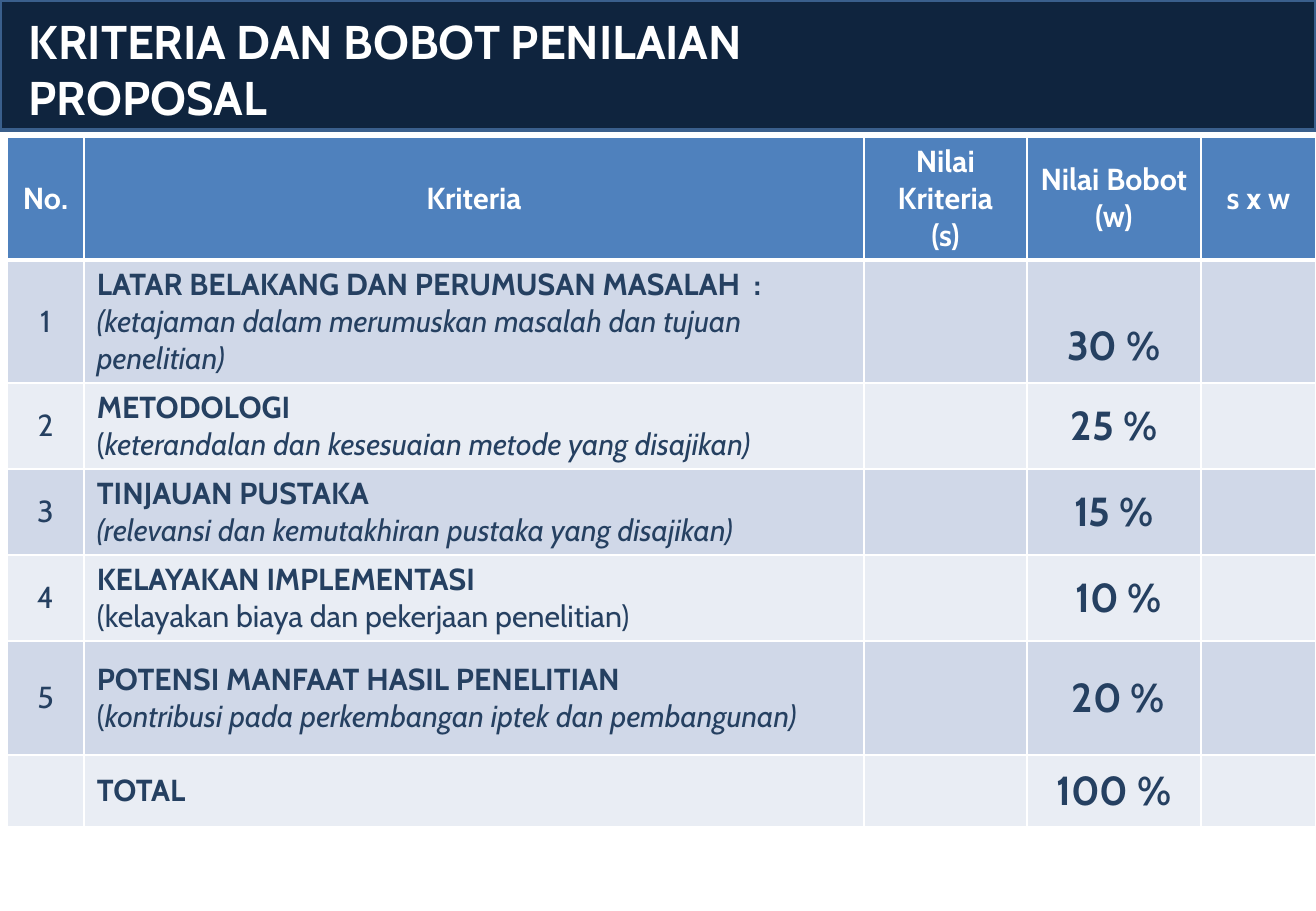
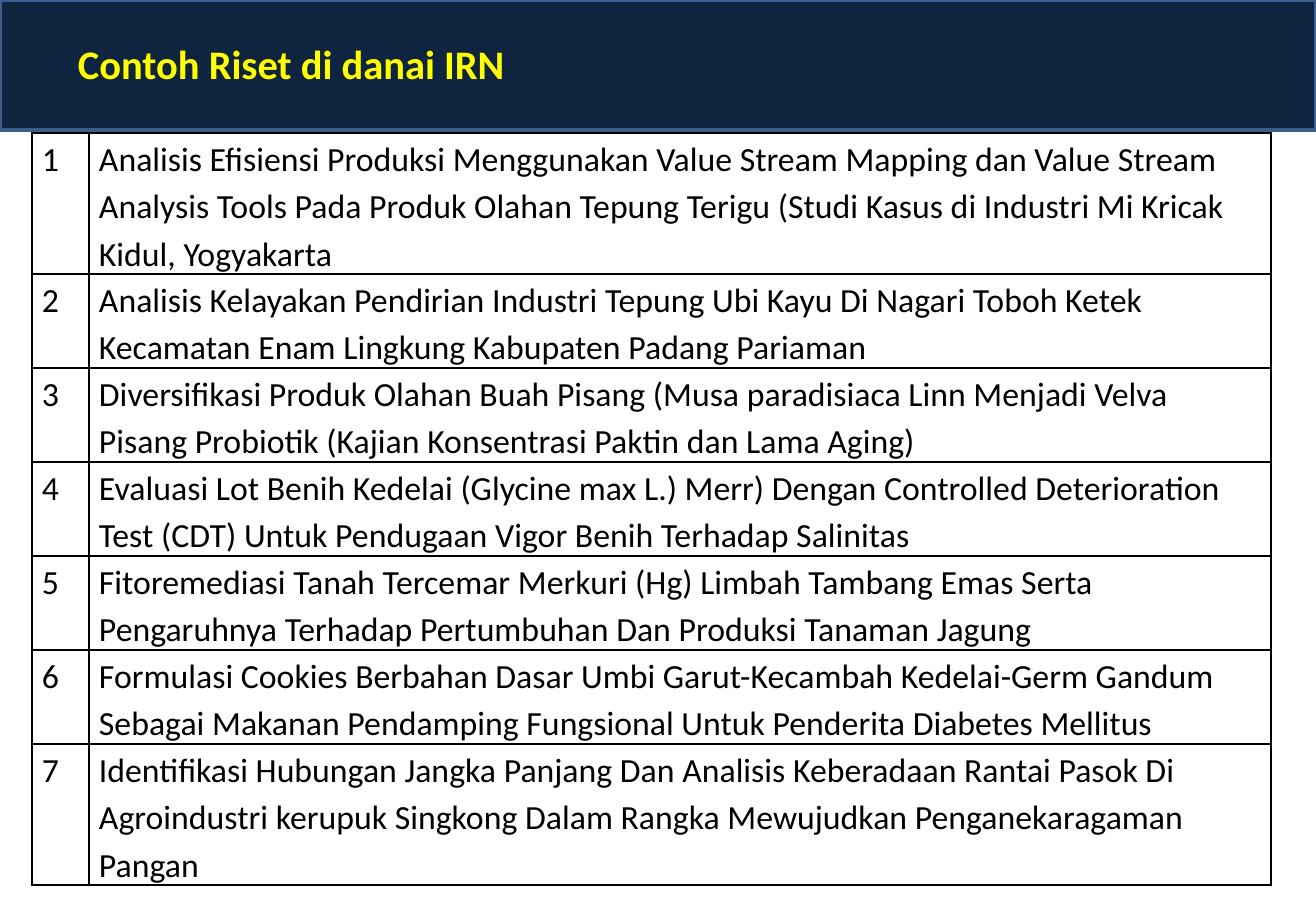
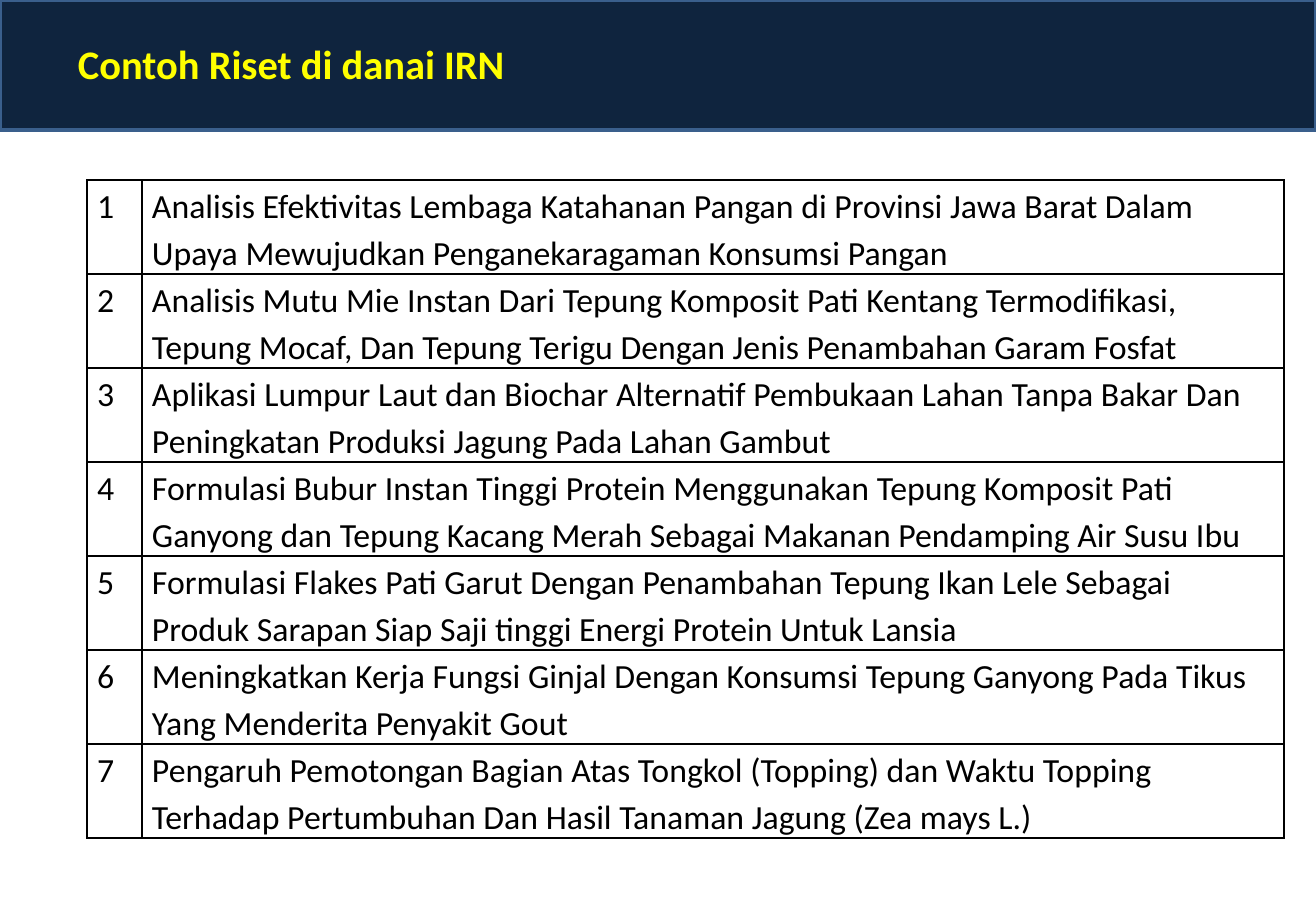
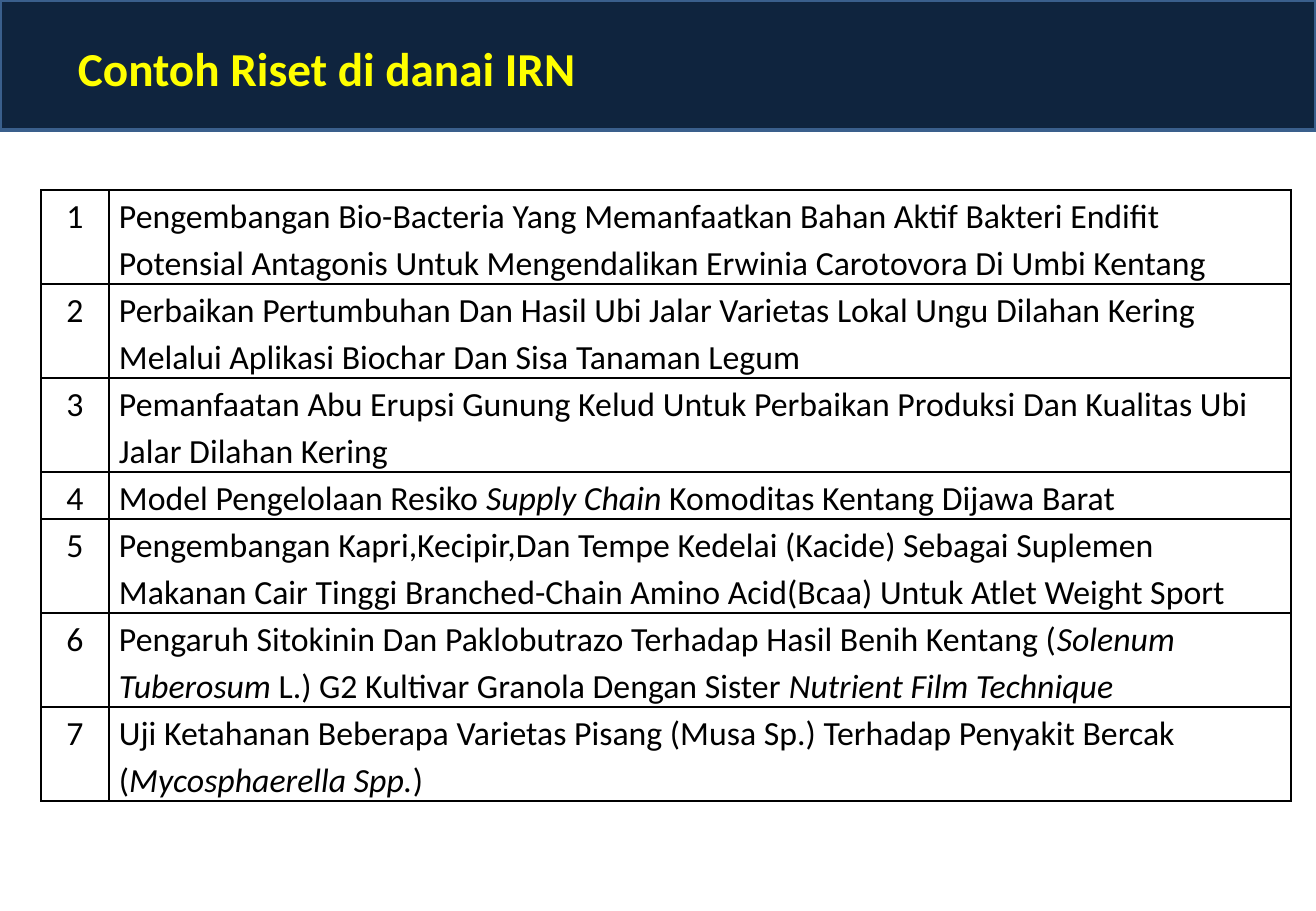
from lxml import etree
from pptx import Presentation
from pptx.dml.color import RGBColor
from pptx.enum.shapes import MSO_SHAPE
from pptx.enum.text import MSO_ANCHOR, PP_ALIGN
from pptx.oxml.ns import qn
from pptx.util import Emu, Pt

PX = 914400 / 121.5

NAVY = RGBColor(0x0F, 0x24, 0x3E)
EDGE = RGBColor(0x3A, 0x5F, 0x8C)
BLUE = RGBColor(0x4F, 0x81, 0xBD)
BAND_DARK = RGBColor(0xD0, 0xD8, 0xE8)
BAND_LIGHT = RGBColor(0xE9, 0xED, 0xF4)
INK = RGBColor(0x25, 0x40, 0x61)
WHITE = RGBColor(0xFF, 0xFF, 0xFF)
BLACK = RGBColor(0x00, 0x00, 0x00)
YELLOW = RGBColor(0xFF, 0xFF, 0x00)

LINE_H = 47  # one line of 20 pt text at 1.15 spacing


def add_grid(s, left, top, cols, rows, color, header_rule=1):
    """Add a plain table whose cells all have ruled borders."""
    box = [Emu(int(v * PX)) for v in (left, top, sum(cols), sum(rows))]
    table = s.shapes.add_table(len(rows), len(cols), *box).table
    table.first_row = table.horz_banding = False
    for col, width in zip(table.columns, cols):
        col.width = Emu(int(width * PX))
    for i, (row, height) in enumerate(zip(table.rows, rows)):
        row.height = Emu(int(height * PX))
        for cell in row.cells:
            tc_pr = cell._tc.get_or_add_tcPr()
            for side in ("lnL", "lnR", "lnT", "lnB"):
                under_header = (i, side) in ((0, "lnB"), (1, "lnT"))
                width = Pt(header_rule if under_header else 1)
                ln = etree.SubElement(tc_pr, qn("a:" + side), w=str(width))
                fill = etree.SubElement(ln, qn("a:solidFill"))
                etree.SubElement(fill, qn("a:srgbClr"), val=str(color))
            cell.fill.background()
    return table


def write_cell(cell, lines, font, size, color, bold_lines=0,
               align=PP_ALIGN.LEFT, spacing=None, margins=(13, 6)):
    """Write one paragraph a line; text between asterisks is italic."""
    cell.margin_left = cell.margin_right = Emu(int(margins[0] * PX))
    cell.margin_top = cell.margin_bottom = Emu(int(margins[1] * PX))
    tf = cell.text_frame
    for i, line in enumerate(lines):
        p = tf.add_paragraph() if i else tf.paragraphs[0]
        p.alignment = align
        p.line_spacing = spacing
        for j, part in enumerate(line.split("*")):
            if part:
                r = p.add_run()
                r.text = part
                r.font.name, r.font.size = font, Pt(size)
                r.font.color.rgb = color
                r.font.bold = i < bold_lines
                r.font.italic = j % 2 == 1


prs = Presentation()
prs.slide_width, prs.slide_height = Emu(int(1316 * PX)), Emu(int(911 * PX))
blank = prs.slide_layouts[6]
for ph in list(blank.placeholders):
    ph.element.getparent().remove(ph.element)

# Slides and titles
EXAMPLES = "Contoh Riset di danai IRN"
titles = [
    ("KRITERIA DAN BOBOT PENILAIAN\nPROPOSAL", "Cabin", 28, WHITE, (17, 6, 868, 183)),
    (EXAMPLES, "Calibri", 24, YELLOW, (66, 33, 1206, 72)),
    (EXAMPLES, "Calibri", 24, YELLOW, (66, 33, 1206, 72)),
    (EXAMPLES, "Calibri", 28, YELLOW, (66, 33, 1206, 119)),
]
for text, font, size, color, box in titles:
    s = prs.slides.add_slide(blank)
    tf = s.shapes.add_textbox(*[Emu(int(v * PX)) for v in box]).text_frame
    tf.word_wrap = True
    tf.text = text
    for p in tf.paragraphs:
        p.font.name, p.font.size, p.font.bold = font, Pt(size), True
        p.font.color.rgb = color

# Title band, moved to the layout so that every slide shares it
band = prs.slides[0].shapes.add_shape(
    MSO_SHAPE.RECTANGLE, 0, 0, prs.slide_width, Emu(int(130 * PX)))
band.shadow.inherit = False
band.fill.solid()
band.fill.fore_color.rgb = NAVY
band.line.color.rgb = EDGE
band.line.width = Pt(2)
blank.shapes.element.append(band.element)

# Slide 1: criteria and weights
header = [["No."], ["Kriteria"], ["Nilai Kriteria", "(s)"],
          ["Nilai Bobot", "(w)"], ["s x w"]]
criteria = [
    ("1", ["LATAR BELAKANG DAN PERUMUSAN MASALAH  :",
           "*(ketajaman dalam merumuskan masalah dan tujuan penelitian)*"], "30 %"),
    ("2", ["METODOLOGI",
           "(*keterandalan dan kesesuaian metode yang disajikan)*"], "25 %"),
    ("3", ["TINJAUAN PUSTAKA",
           "*(relevansi dan kemutakhiran pustaka yang disajikan)*"], "15 %"),
    ("4", ["KELAYAKAN IMPLEMENTASI",
           "(kelayakan biaya dan pekerjaan penelitian)"], " 10 %"),
    ("5", ["POTENSI MANFAAT HASIL PENELITIAN",
           "(*kontribusi pada perkembangan iptek dan pembangunan)*"], " 20 %"),
    ("", ["TOTAL"], "100 %"),
]
table = add_grid(prs.slides[0], 7, 137, [77, 780, 163, 174, 115],
                 [123, 123, 86, 86, 86, 114, 72], WHITE, header_rule=3)
for col, lines in enumerate(header):
    write_cell(table.cell(0, col), lines, "Cabin", 18, WHITE, len(lines), PP_ALIGN.CENTER)
for row, (number, lines, weight) in enumerate(criteria, 1):
    write_cell(table.cell(row, 0), [number], "Cabin", 18, INK, align=PP_ALIGN.CENTER)
    write_cell(table.cell(row, 1), lines, "Cabin", 18, INK, 1)
    write_cell(table.cell(row, 3), [weight], "Cabin", 24, INK, 1, PP_ALIGN.CENTER)
table.cell(1, 3).margin_top = Emu(int(55 * PX))  # first weight sits low in its cell
for i, row in enumerate(table.rows):
    for cell in row.cells:
        cell.vertical_anchor = MSO_ANCHOR.MIDDLE
        cell.fill.solid()
        cell.fill.fore_color.rgb = (
            BLUE if i == 0 else BAND_DARK if i % 2 else BAND_LIGHT)

# Slides 2 to 4: numbered research titles
# left, top, column widths, lines in each row, number alignment, titles
lists = [
    (32, 133, [57, 1182], [3, 2, 2, 2, 2, 2, 3], PP_ALIGN.LEFT, [
        "Analisis Efisiensi Produksi Menggunakan Value Stream Mapping dan Value Stream Analysis Tools Pada Produk Olahan Tepung Terigu (Studi Kasus di Industri Mi Kricak Kidul, Yogyakarta",
        "Analisis Kelayakan Pendirian Industri Tepung Ubi Kayu Di Nagari Toboh Ketek Kecamatan Enam Lingkung Kabupaten Padang Pariaman",
        "Diversifikasi Produk Olahan Buah Pisang (Musa paradisiaca Linn Menjadi Velva Pisang Probiotik (Kajian Konsentrasi Paktin dan Lama Aging)",
        "Evaluasi Lot Benih Kedelai (Glycine max L.) Merr) Dengan Controlled Deterioration Test (CDT) Untuk Pendugaan Vigor Benih Terhadap Salinitas",
        "Fitoremediasi Tanah Tercemar Merkuri (Hg) Limbah Tambang Emas Serta Pengaruhnya Terhadap Pertumbuhan Dan Produksi Tanaman Jagung",
        "Formulasi Cookies Berbahan Dasar Umbi Garut-Kecambah Kedelai-Germ Gandum Sebagai Makanan Pendamping Fungsional Untuk Penderita Diabetes Mellitus",
        "Identifikasi Hubungan Jangka Panjang Dan Analisis Keberadaan Rantai Pasok Di Agroindustri kerupuk Singkong Dalam Rangka Mewujudkan Penganekaragaman Pangan",
    ]),
    (87, 180, [55, 1142], [2] * 7, PP_ALIGN.LEFT, [
        "Analisis Efektivitas Lembaga Katahanan Pangan di Provinsi Jawa Barat Dalam Upaya Mewujudkan Penganekaragaman Konsumsi Pangan",
        "Analisis Mutu Mie Instan Dari Tepung Komposit Pati Kentang Termodifikasi, Tepung Mocaf, Dan Tepung Terigu Dengan Jenis Penambahan Garam Fosfat",
        "Aplikasi Lumpur Laut dan Biochar Alternatif Pembukaan Lahan Tanpa Bakar Dan Peningkatan Produksi Jagung Pada Lahan Gambut",
        "Formulasi Bubur Instan Tinggi Protein Menggunakan Tepung Komposit Pati Ganyong dan Tepung Kacang Merah Sebagai Makanan Pendamping Air Susu Ibu",
        "Formulasi Flakes Pati Garut Dengan Penambahan Tepung Ikan Lele Sebagai Produk Sarapan Siap Saji tinggi Energi Protein Untuk Lansia",
        "Meningkatkan Kerja Fungsi Ginjal Dengan Konsumsi Tepung Ganyong Pada Tikus Yang Menderita Penyakit Gout",
        "Pengaruh Pemotongan Bagian Atas Tongkol (Topping) dan Waktu Topping Terhadap Pertumbuhan Dan Hasil Tanaman Jagung (Zea mays L.)",
    ]),
    (41, 190, [68, 1182], [2, 2, 2, 1, 2, 2, 2], PP_ALIGN.CENTER, [
        "Pengembangan Bio-Bacteria Yang Memanfaatkan Bahan Aktif Bakteri Endifit Potensial Antagonis Untuk Mengendalikan Erwinia Carotovora Di Umbi Kentang",
        "Perbaikan Pertumbuhan Dan Hasil Ubi Jalar Varietas Lokal Ungu Dilahan Kering Melalui Aplikasi Biochar Dan Sisa Tanaman Legum",
        "Pemanfaatan Abu Erupsi Gunung Kelud Untuk Perbaikan Produksi Dan Kualitas Ubi Jalar Dilahan Kering",
        "Model Pengelolaan Resiko *Supply Chain* Komoditas Kentang Dijawa Barat",
        "Pengembangan Kapri,Kecipir,Dan Tempe Kedelai (Kacide) Sebagai Suplemen Makanan Cair Tinggi Branched-Chain Amino Acid(Bcaa) Untuk Atlet Weight Sport",
        "Pengaruh Sitokinin Dan Paklobutrazo Terhadap Hasil Benih Kentang (*Solenum Tuberosum* L.) G2 Kultivar Granola Dengan Sister *Nutrient Film Technique*",
        "Uji Ketahanan Beberapa Varietas Pisang (Musa Sp.) Terhadap Penyakit Bercak (*Mycosphaerella Spp.*)",
    ]),
]
for s, (left, top, cols, line_counts, align, studies) in zip(list(prs.slides)[1:], lists):
    table = add_grid(s, left, top, cols, [n * LINE_H for n in line_counts], BLACK)
    for row, study in enumerate(studies):
        for col, (text, side) in enumerate([(str(row + 1), align), (study, PP_ALIGN.LEFT)]):
            write_cell(table.cell(row, col), [text], "Calibri", 20, BLACK,
                       align=side, spacing=1.15, margins=(10, 0))

prs.save("out.pptx")
